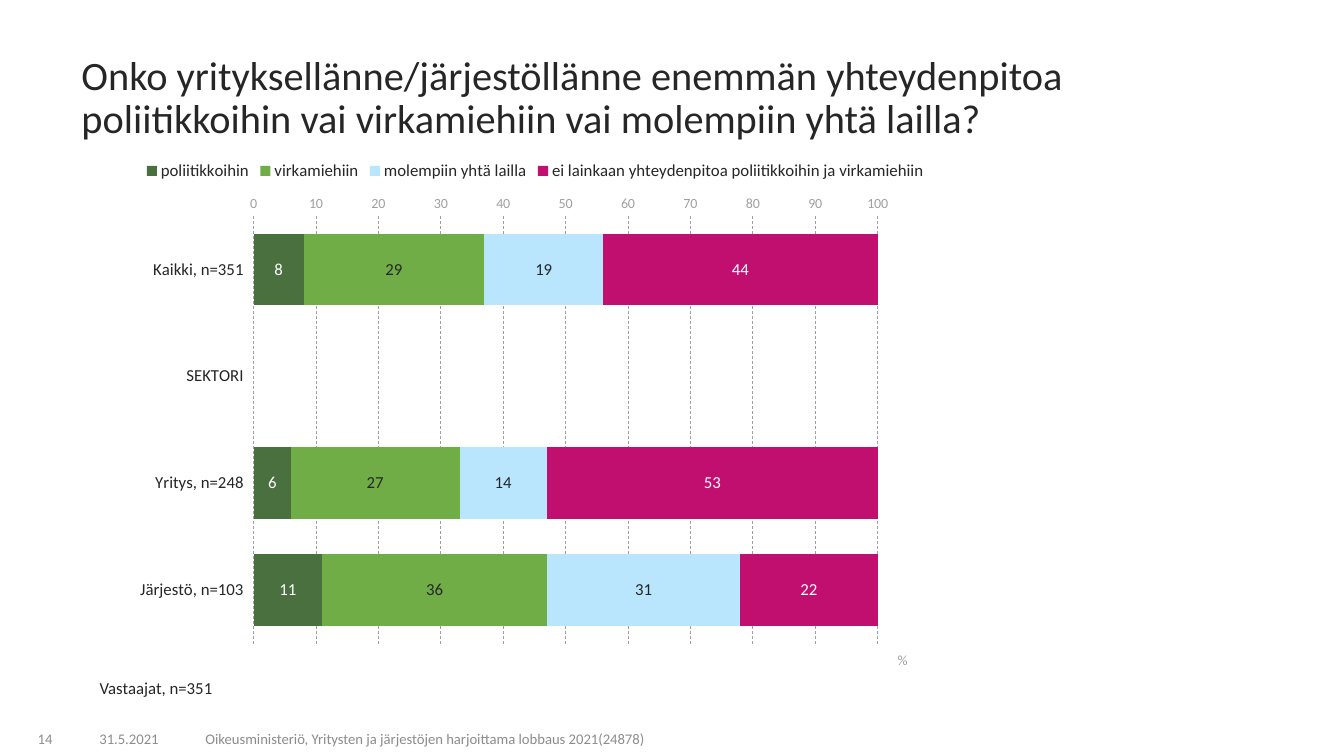
import pptx
import pptx.chart.data
import pptx.dml.color
import pptx.enum.chart
import pptx.enum.dml
import pptx.enum.text
import pptx.oxml
import pptx.oxml.ns
import pptx.util

SLIDE_WIDTH = pptx.util.Inches(13.33)
SLIDE_HEIGHT = pptx.util.Inches(7.5)
COLUMNS, ROWS = 40, 30
FONT = "Calibri"
COLORS = {
    "text": "262626",
    "footer": "8C8C8C",
    "scale": "A0A0A0",
    "white": "FFFFFF",
    "politicians": "4A7040",
    "officials": "70AD47",
    "both": "B9E6FD",
    "neither": "C10F70",
}
RESPONDENTS = ["Kaikki, n=351", "SEKTORI", "Yritys, n=248", "Järjestö, n=103"]
ANSWERS = [
    ("poliitikkoihin", [8, None, 6, 11], "politicians", "white"),
    ("virkamiehiin", [29, None, 27, 36], "officials", "text"),
    ("molempiin yhtä lailla", [19, None, 14, 31], "both", "text"),
    ("ei lainkaan yhteydenpitoa poliitikkoihin ja virkamiehiin",
     [44, None, 53, 22], "neither", "white"),
]

ANCHOR = pptx.enum.text.MSO_ANCHOR
ALIGN = pptx.enum.text.PP_ALIGN
FOOTER = {"size": 10.5, "color": "footer", "anchor": ANCHOR.BOTTOM}


def rgb(name):
    return pptx.dml.color.RGBColor.from_string(COLORS[name])


def cell_area(column, row, columns, rows):
    return (int(SLIDE_WIDTH * column / COLUMNS), int(SLIDE_HEIGHT * row / ROWS),
            int(SLIDE_WIDTH * columns / COLUMNS), int(SLIDE_HEIGHT * rows / ROWS))


def set_values(target, values):
    for name, value in values.items():
        setattr(target, name, value)


def style_font(font, size, color):
    set_values(font, {"name": FONT, "size": pptx.util.Pt(size), "bold": False})
    font.color.rgb = rgb(color)


def add_text(slide, area, text, size, color="text", anchor=ANCHOR.TOP,
             align=ALIGN.LEFT, spacing=1.0):
    frame = slide.shapes.add_textbox(*cell_area(*area)).text_frame
    set_values(frame, {"word_wrap": True, "vertical_anchor": anchor})
    paragraph = frame.paragraphs[0]
    set_values(paragraph, {"alignment": align, "line_spacing": spacing})
    run = paragraph.add_run()
    run.text = text
    style_font(run.font, size, color)


def place_chart_part(part, index, target="", **shares):
    for previous in part.findall(pptx.oxml.ns.qn("c:layout")):
        part.remove(previous)
    inner = f'<c:layoutTarget val="{target}"/>' if target else ""
    modes = "".join(f'<c:{side}Mode val="edge"/>' for side in "xy")
    sizes = "".join(f'<c:{side} val="{share}"/>' for side, share in shares.items())
    part.insert(index, pptx.oxml.parse_xml(
        f'<c:layout {pptx.oxml.ns.nsdecls("c")}><c:manualLayout>'
        f"{inner}{modes}{sizes}</c:manualLayout></c:layout>"))


def style_category_axis(axis):
    set_values(axis, {
        "reverse_order": True,
        "crosses": pptx.enum.chart.XL_AXIS_CROSSES.MAXIMUM,
        "major_tick_mark": pptx.enum.chart.XL_TICK_MARK.NONE,
        "tick_label_position": pptx.enum.chart.XL_TICK_LABEL_POSITION.LOW,
        "has_major_gridlines": False,
    })
    axis.format.line.fill.background()
    style_font(axis.tick_labels.font, 12, "text")


def style_value_axis(axis):
    set_values(axis, {
        "minimum_scale": 0,
        "maximum_scale": 100.01,
        "major_unit": 10,
        "major_tick_mark": pptx.enum.chart.XL_TICK_MARK.NONE,
        "has_major_gridlines": True,
        "has_title": True,
    })
    axis.format.line.fill.background()
    style_font(axis.tick_labels.font, 10, "scale")
    set_values(axis.tick_labels, {"number_format": "General",
                                  "number_format_is_linked": False})
    gridline = axis.major_gridlines.format.line
    gridline.color.rgb = rgb("scale")
    set_values(gridline, {"width": pptx.util.Pt(0.5),
                          "dash_style": pptx.enum.dml.MSO_LINE.DASH})
    unit = axis.axis_title.text_frame.paragraphs[0].add_run()
    unit.text = "%"
    style_font(unit.font, 10, "scale")


def style_answer(series, fill, label):
    series.format.fill.solid()
    series.format.fill.fore_color.rgb = rgb(fill)
    labels = series.data_labels
    set_values(labels, {"show_value": True, "number_format": "#,##0",
                        "number_format_is_linked": False})
    style_font(labels.font, 12, label)


def add_answer_chart(slide, area):
    data = pptx.chart.data.CategoryChartData()
    data.categories = RESPONDENTS
    for name, shares, _, _ in ANSWERS:
        data.add_series(name, shares)
    chart = slide.shapes.add_chart(
        pptx.enum.chart.XL_CHART_TYPE.BAR_STACKED, *cell_area(*area), data).chart
    set_values(chart, {"has_title": False, "has_legend": True})
    style_font(chart.font, 12, "text")
    bars = chart.plots[0]
    set_values(bars, {"gap_width": 50, "overlap": 100, "vary_by_categories": False})
    for series, (_, _, fill, label) in zip(bars.series, ANSWERS):
        style_answer(series, fill, label)
    style_category_axis(chart.category_axis)
    style_value_axis(chart.value_axis)
    set_values(chart.legend, {
        "position": pptx.enum.chart.XL_LEGEND_POSITION.TOP,
        "include_in_layout": False,
    })
    style_font(chart.legend.font, 12, "text")
    plot_area, = chart.element.xpath("//c:plotArea")
    legend, = chart.element.xpath("//c:legend")
    unit, = chart.element.xpath("//c:valAx/c:title")
    place_chart_part(plot_area, 0, "inner", x=0.21, y=0.13, w=0.72, h=0.81)
    place_chart_part(legend, 1, x=0.08, y=0.02, w=0.91, h=0.05)
    place_chart_part(unit, 1, x=0.95, y=0.95)


def main():
    deck = pptx.Presentation()
    set_values(deck, {"slide_width": SLIDE_WIDTH, "slide_height": SLIDE_HEIGHT})
    slide = deck.slides.add_slide(deck.slide_layouts[6])
    add_text(slide, (1.98, 28.64, 3.72, 1.2), "31.5.2021",
             align=ALIGN.CENTER, **FOOTER)
    add_text(slide, (5.82, 28.64, 17.76, 1.2),
             "Oikeusministeriö, Yritysten ja järjestöjen harjoittama lobbaus 2021(24878)",
             **FOOTER)
    add_text(slide, (0.09, 28.64, 1.77, 1.2), "14", align=ALIGN.RIGHT, **FOOTER)
    add_text(slide, (2.13, 2.56, 36.21, 2.72),
             "Onko yrityksellänne/järjestöllänne enemmän yhteydenpitoa "
             "poliitikkoihin vai virkamiehiin vai molempiin yhtä lailla?",
             28.8, anchor=ANCHOR.MIDDLE, spacing=0.9)
    add_answer_chart(slide, (2.13, 5.84, 25.8, 20.96))
    add_text(slide, (2.67, 26.8, 27.54, 1.12), "Vastaajat, n=351", 12, spacing=0.9)
    deck.save("out.pptx")


if __name__ == "__main__":
    main()
